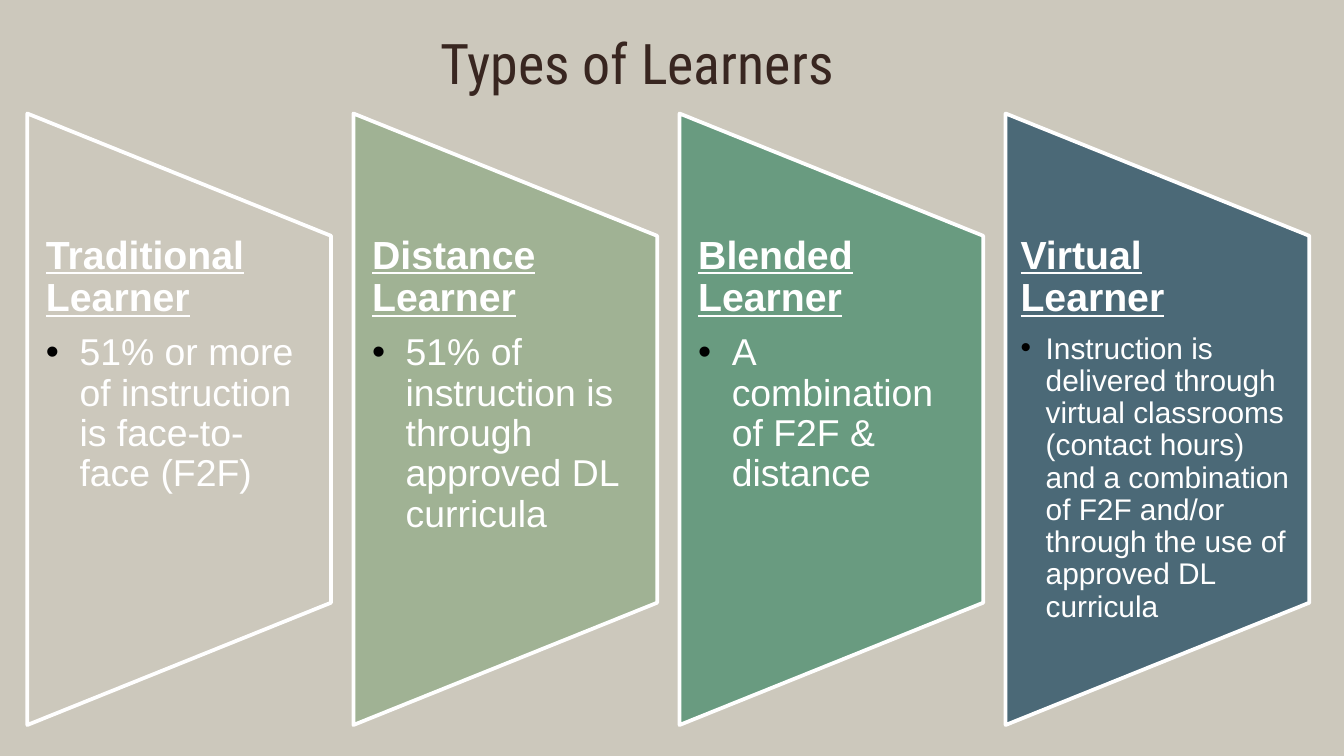
from lxml import etree
from pptx import Presentation
from pptx.dml.color import RGBColor
from pptx.enum import shapes, text
from pptx.oxml import ns
from pptx.util import Pt

BACKGROUND = RGBColor(0xCC, 0xC8, 0xBC)
BROWN = RGBColor(0x38, 0x26, 0x20)
WHITE = RGBColor(0xFF, 0xFF, 0xFF)
SAGE = RGBColor(0xA0, 0xB2, 0x94)
GREEN = RGBColor(0x69, 0x9B, 0x80)
BLUE = RGBColor(0x4B, 0x69, 0x77)

LEFT, STEP = 14.65, 174.7
PANEL_W, PANEL_H = 162.7, 327.6
MIDDLE = 224.6

LEARNERS = [
    ("Traditional Learner", "51% or more of instruction is face-to-face (F2F)",
     BACKGROUND, 20, 10, 18),
    ("Distance Learner", "51% of instruction is through approved DL curricula",
     SAGE, 20, 10, 18),
    ("Blended Learner", "A combination of F2F & distance", GREEN, 20, 10, 18),
    ("Virtual Learner",
     "Instruction is delivered through virtual classrooms (contact hours) and a "
     "combination of F2F and/or through the use of approved DL curricula",
     BLUE, 16, 8, 13.5),
]


def style_run(p, font, size, color, bold=False, underline=False):
    f = p.runs[0].font
    f.name, f.size, f.bold, f.underline = font, Pt(size), bold, underline
    f.color.rgb = color


def add_bullet(p, indent):
    pPr = p._p.get_or_add_pPr()
    pPr.set("marL", str(Pt(indent)))
    pPr.set("indent", str(-Pt(indent)))
    color = etree.SubElement(pPr, ns.qn("a:buClr"))
    etree.SubElement(color, ns.qn("a:srgbClr"), val="000000")
    etree.SubElement(pPr, ns.qn("a:buFont"), typeface="Arial")
    etree.SubElement(pPr, ns.qn("a:buChar"), char="•")


def add_text_frame(s, x, y, w, h, side, edge):
    tf = s.shapes.add_textbox(Pt(x), Pt(y), Pt(w), Pt(h)).text_frame
    tf.word_wrap = True
    tf.margin_left = tf.margin_right = Pt(side)
    tf.margin_top = tf.margin_bottom = Pt(edge)
    return tf


def add_title(s, title):
    tf = add_text_frame(s, 140.4, 11.5, 401.8, 43.2, 7.2, 7.2)
    tf.vertical_anchor = text.MSO_ANCHOR.MIDDLE
    p = tf.paragraphs[0]
    p.text = title
    p.alignment = text.PP_ALIGN.CENTER
    style_run(p, "Roboto Condensed", 30, BROWN)


def add_panel(s, x, fill):
    sp = s.shapes.add_shape(
        shapes.MSO_SHAPE.FLOWCHART_MANUAL_OPERATION,
        Pt(x + (PANEL_W - PANEL_H) / 2), Pt(MIDDLE - PANEL_W / 2),
        Pt(PANEL_H), Pt(PANEL_W))
    sp.rotation = 270
    sp.shadow.inherit = False
    sp.fill.solid()
    sp.fill.fore_color.rgb = fill
    sp.line.color.rgb = WHITE
    sp.line.width = Pt(2)


def add_description(s, x, heading, body, size, inset, indent):
    tf = add_text_frame(s, x, 126, PANEL_W, 196.6, inset, 0)
    p = tf.paragraphs[0]
    p.text = heading
    p.line_spacing = 0.9
    p.space_after = Pt(7.35)
    style_run(p, "Arial", 21, WHITE, bold=True, underline=True)
    p = tf.add_paragraph()
    p.text = body
    p.level = 1
    p.line_spacing = 0.9
    p.space_after = Pt(3)
    add_bullet(p, indent)
    style_run(p, "Arial", size, WHITE)


def main():
    prs = Presentation()
    prs.slide_width, prs.slide_height = Pt(720), Pt(405)
    s = prs.slides.add_slide(prs.slide_layouts[6])
    s.background.fill.solid()
    s.background.fill.fore_color.rgb = BACKGROUND
    add_title(s, "Types of Learners")
    for i, (heading, body, fill, size, inset, indent) in enumerate(LEARNERS):
        x = LEFT + i * STEP
        add_panel(s, x, fill)
        add_description(s, x, heading, body, size, inset, indent)
    prs.save("out.pptx")


if __name__ == "__main__":
    main()
